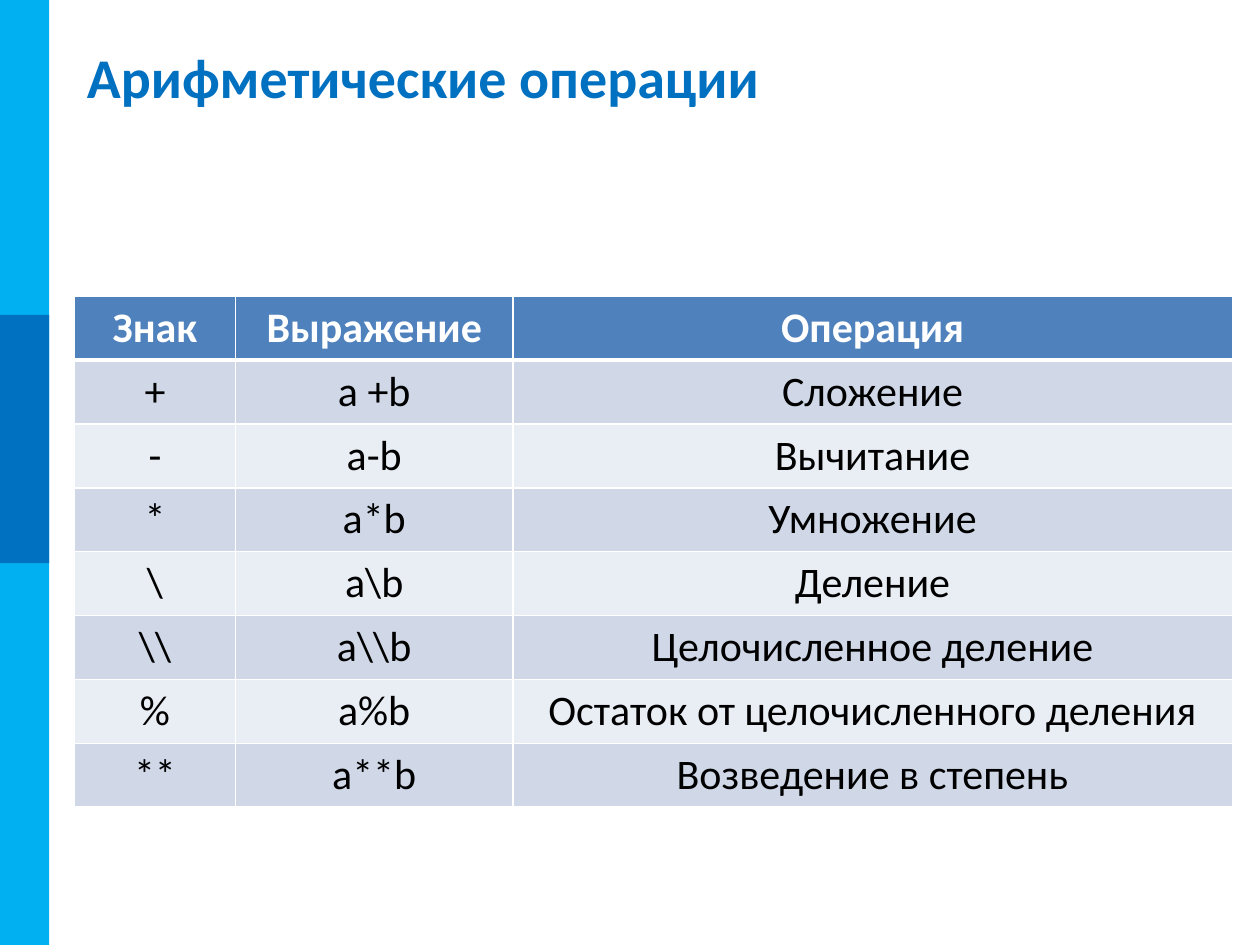
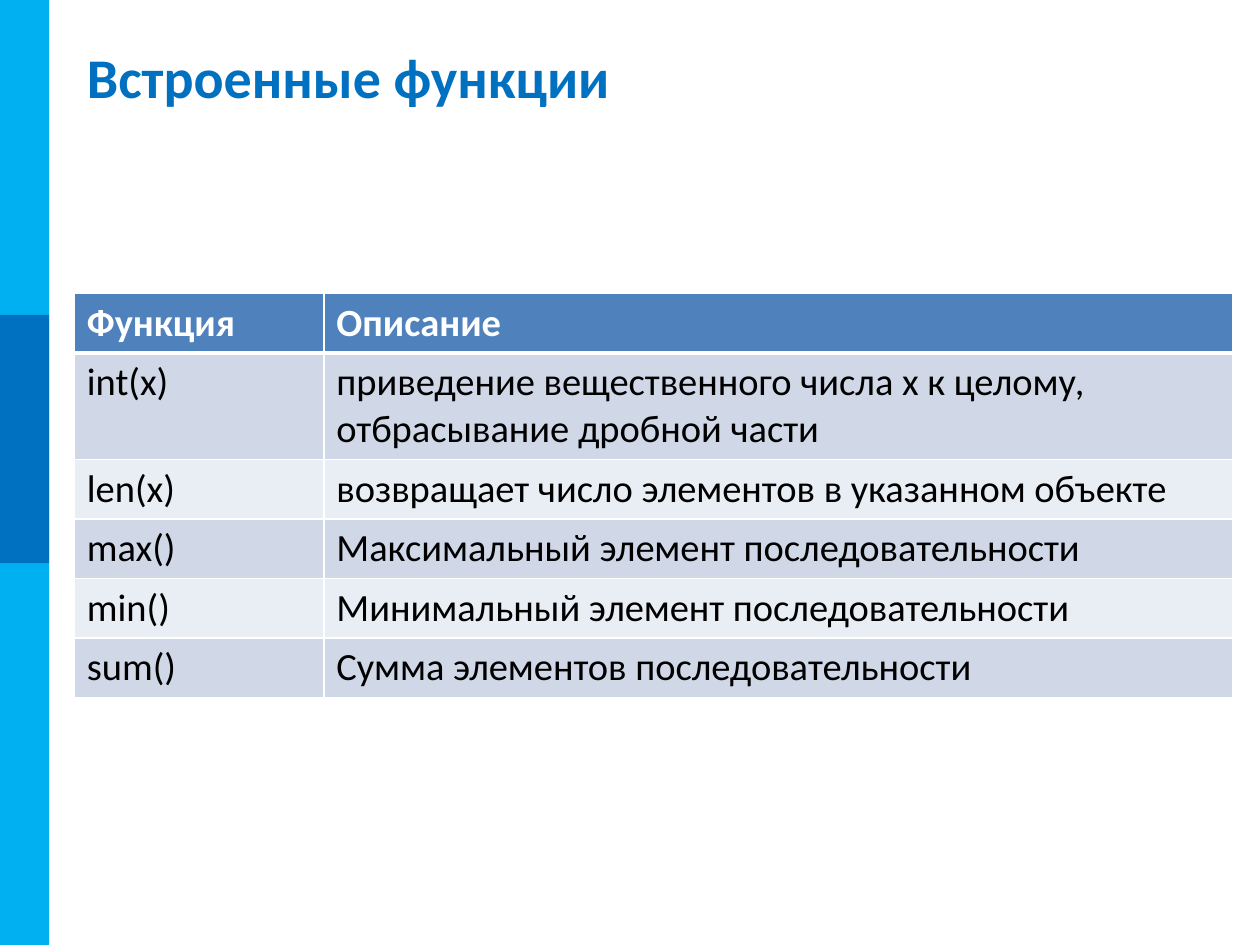
from lxml import etree
from pptx import Presentation
from pptx.dml.color import RGBColor
from pptx.enum import shapes, text
from pptx.oxml import ns
from pptx.util import Inches, Pt

FONT = "Calibri"
WHITE, BLACK = "FFFFFF", "000000"
LIGHT_BLUE, BLUE = "00B0F0", "0070C0"
HEADER_FILL = "4F81BD"
ROW_FILLS = ("D0D8E8", "E9EDF4")

SIDEBAR_BOX = (0, 0, 0.39, 7.5)
TITLE_BOX = (0.59, 0.3, 9.06, 0.61)
LEFT, CENTER = text.PP_ALIGN.LEFT, text.PP_ALIGN.CENTER

OPERATIONS = [
    ("Знак", "Выражение", "Операция"),
    ("+", "a +b", "Сложение"),
    ("-", "a-b", "Вычитание"),
    ("*", "a*b", "Умножение"),
    ("\\", "a\\b", "Деление"),
    ("\\\\", "a\\\\b", "Целочисленное деление"),
    ("%", "a%b", "Остаток от целочисленного деления"),
    ("**", "a**b", "Возведение в степень"),
]
FUNCTIONS = [
    ("Функция", "Описание"),
    ("int(x)", "приведение вещественного числа x к целому, отбрасывание дробной части"),
    ("len(x)", "возвращает число элементов в указанном объекте"),
    ("max()", "Максимальный элемент последовательности"),
    ("min()", "Минимальный элемент последовательности"),
    ("sum()", "Сумма элементов последовательности"),
]


def color(hex_value):
    return RGBColor.from_string(hex_value)


def write(frame, content, size, fill=BLACK, bold=False, align=LEFT):
    paragraph = frame.paragraphs[0]
    paragraph.alignment = align
    run = paragraph.add_run()
    run.text = content
    run.font.name = FONT
    run.font.size = Pt(size)
    run.font.bold = bold
    run.font.color.rgb = color(fill)


def add_band(slide, box, fill):
    band = slide.shapes.add_shape(shapes.MSO_SHAPE.RECTANGLE, *map(Inches, box))
    band.shadow.inherit = False
    band.fill.solid()
    band.fill.fore_color.rgb = color(fill)
    band.line.fill.background()


def add_sidebar(slide, box):
    left, top, width, height = box
    add_band(slide, box, LIGHT_BLUE)
    add_band(slide, (left, top + height / 3, width, 1.97), BLUE)


def set_title(slide, content, box):
    title = slide.shapes.title
    title.left, title.top, title.width, title.height = map(Inches, box)
    frame = title.text_frame
    frame.vertical_anchor = text.MSO_ANCHOR.MIDDLE
    frame.auto_size = text.MSO_AUTO_SIZE.NONE
    write(frame, content, 32, BLUE, bold=True)


def set_borders(cell, top, bottom):
    """Draw white cell borders; widths in points."""
    properties = cell._tc.get_or_add_tcPr()
    for tag, width in (("a:lnL", 1), ("a:lnR", 1), ("a:lnT", top), ("a:lnB", bottom)):
        line = etree.SubElement(properties, ns.qn(tag), w=str(Pt(width)))
        fill = etree.SubElement(line, ns.qn("a:solidFill"))
        etree.SubElement(fill, ns.qn("a:srgbClr"), val=WHITE)


def add_banded_table(slide, rows, box, column_widths, row_heights, size, align):
    frame = slide.shapes.add_table(len(rows), len(column_widths), *map(Inches, box))
    table = frame.table
    for column, width in zip(table.columns, column_widths):
        column.width = Inches(width)
    for row, height in zip(table.rows, row_heights):
        row.height = Inches(height)

    for i, values in enumerate(rows):
        header = i == 0
        for j, value in enumerate(values):
            cell = table.cell(i, j)
            # The header is set off from the body by a thicker line
            set_borders(cell, top=3 if i == 1 else 1, bottom=3 if header else 1)
            cell.fill.solid()
            cell.fill.fore_color.rgb = color(HEADER_FILL if header else ROW_FILLS[(i - 1) % 2])
            write(cell.text_frame, value, size, WHITE if header else BLACK, header, align)


def add_table_slide(presentation, title, rows, box, column_widths, row_heights, size, align):
    slide = presentation.slides.add_slide(presentation.slide_layouts.get_by_name("Title Only"))
    add_sidebar(slide, SIDEBAR_BOX)
    set_title(slide, title, TITLE_BOX)
    add_banded_table(slide, rows, box, column_widths, row_heights, size, align)


def main():
    presentation = Presentation()
    presentation.slide_width, presentation.slide_height = Inches(10), Inches(7.5)

    # Arithmetic operators
    add_table_slide(presentation, "Арифметические операции", OPERATIONS,
                    (0.59, 2.35, 9.19, 4), (1.28, 2.2, 5.71), [0.5] * 8, 24, CENTER)
    # Built-in functions, with one two-line row
    add_table_slide(presentation, "Встроенные функции", FUNCTIONS,
                    (0.59, 2.33, 9.19, 3.17), (1.98, 7.21),
                    [0.47, 0.83] + [0.47] * 4, 22, LEFT)

    presentation.save("out.pptx")


if __name__ == "__main__":
    main()
